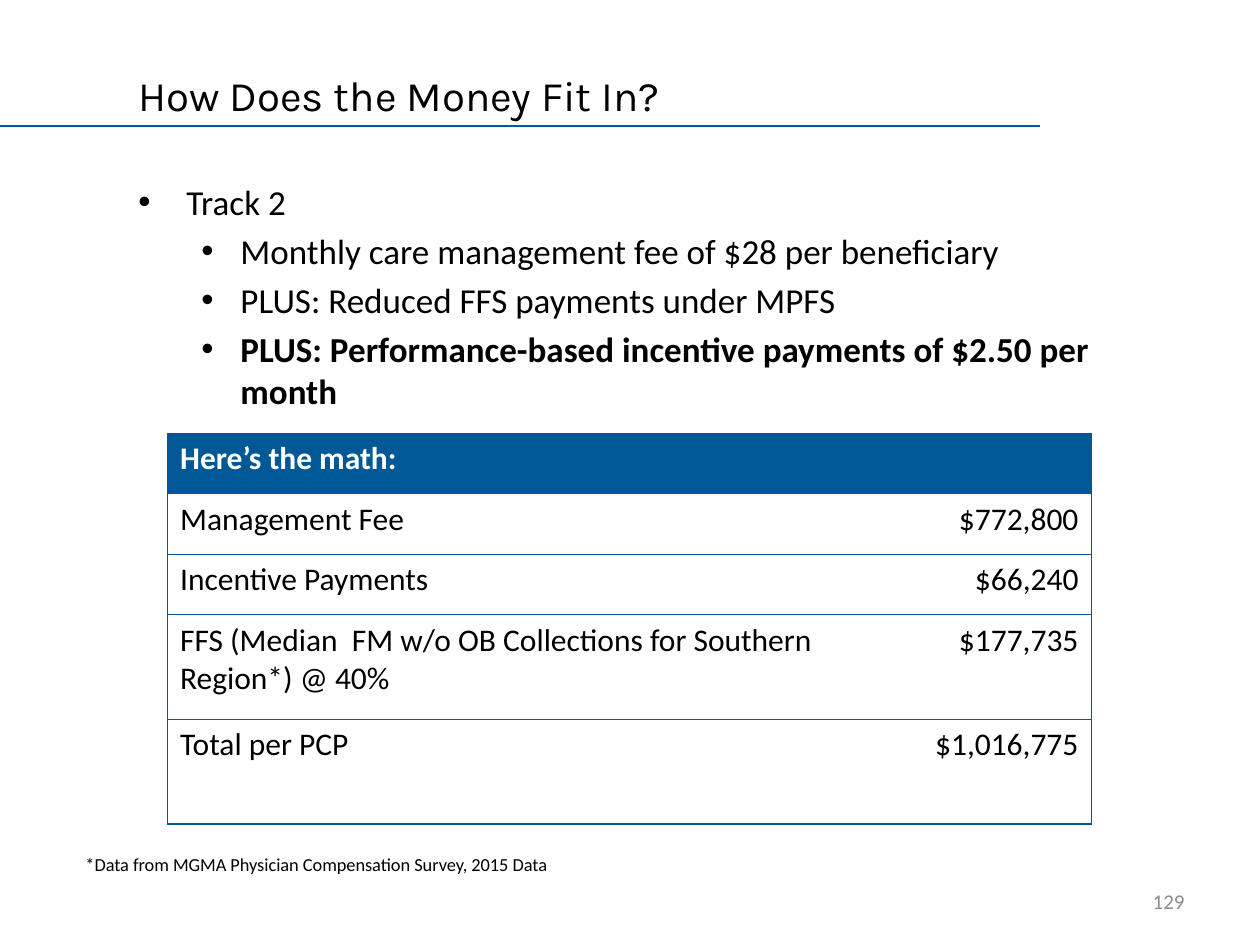
from dataclasses import dataclass

from lxml.etree import SubElement
from pptx import Presentation
from pptx.dml.color import RGBColor
from pptx.enum.shapes import MSO_CONNECTOR
from pptx.enum.text import MSO_ANCHOR, PP_ALIGN
from pptx.oxml.ns import qn
from pptx.util import Inches, Pt


@dataclass(frozen=True)
class Theme:
    rule: str = "005B99"
    table: str = "005996"
    text: str = "000000"
    header_text: str = "FFFFFF"
    page_number: str = "8C8C8C"
    title_font: str = "Karla"
    body_font: str = "Calibri"
    title_size: float = 24
    body_size: float = 20
    table_size: float = 18
    footnote_size: float = 10.5
    page_number_size: float = 12
    line_width: float = 0.75


theme = Theme()


def format_runs(paragraph, size, color=theme.text, font=theme.body_font, bold=False):
    for run in paragraph.runs:
        run.font.size = Pt(size)
        run.font.name = font
        run.font.bold = bold
        run.font.color.rgb = RGBColor.from_string(color)


def add_text_box(left, top, width, height, anchor=MSO_ANCHOR.TOP):
    box = slide.shapes.add_textbox(Inches(left), Inches(top), Inches(width), Inches(height))
    box.text_frame.word_wrap = True
    box.text_frame.vertical_anchor = anchor
    return box.text_frame


presentation = Presentation()
presentation.slide_width = Inches(10)
presentation.slide_height = Inches(7.5)
slide = presentation.slides.add_slide(presentation.slide_layouts[6])

# Title and its rule
title_rule = slide.shapes.add_connector(
    MSO_CONNECTOR.STRAIGHT, Inches(0), Inches(1), Inches(8.25), Inches(1))
title_rule.line.color.rgb = RGBColor.from_string(theme.rule)
title_rule.line.width = Pt(theme.line_width)
SubElement(title_rule._element.spPr, qn("a:effectLst"))

title = add_text_box(1, 0.5, 7, 0.5, MSO_ANCHOR.MIDDLE)
title.text = "How Does the Money Fit In?"
format_runs(title.paragraphs[0], theme.title_size, font=theme.title_font)

# Bullets: text, level, bold
bullets = [
    ("Track 2", 0, False),
    ("Monthly care management fee of $28 per beneficiary", 1, False),
    ("PLUS: Reduced FFS payments under MPFS", 1, False),
    ("PLUS: Performance-based incentive payments of $2.50 per month", 1, True),
]
level_indents = [(0.38, -0.38), (0.81, -0.31)]
body = add_text_box(1, 1.38, 7.98, 4.95)
body.text = "\n".join(text for text, level, bold in bullets)
for index, (paragraph, (text, level, bold)) in enumerate(zip(body.paragraphs, bullets)):
    margin, indent = level_indents[level]
    paragraph.level = level
    properties = paragraph._p.get_or_add_pPr()
    properties.set("marL", str(Inches(margin)))
    properties.set("indent", str(Inches(indent)))
    SubElement(properties, qn("a:buFont"), typeface="Arial")
    SubElement(properties, qn("a:buChar"), char="•")
    if index > 0:
        paragraph.space_before = Pt(0.2 * theme.body_size)
    format_runs(paragraph, theme.body_size, bold=bold)

# Payment table
rows = [
    ("Here’s the math:", ""),
    ("Management Fee", "$772,800"),
    ("Incentive Payments", "$66,240"),
    ("FFS (Median  FM w/o OB Collections for Southern Region*) @ 40%", "$177,735"),
    ("Total per PCP", "$1,016,775"),
]
column_widths = [5.58, 1.75]
row_heights = [0.48, 0.48, 0.48, 0.83, 0.83]
table_shape = slide.shapes.add_table(
    len(rows), len(column_widths), Inches(1.33), Inches(3.44),
    Inches(sum(column_widths)), Inches(sum(row_heights)))
table = table_shape.table
table.first_row = False
table.horz_banding = False
for column, width in zip(table.columns, column_widths):
    column.width = Inches(width)
for row, height in zip(table.rows, row_heights):
    row.height = Inches(height)

for row_index, row in enumerate(rows):
    is_header = row_index == 0
    for column_index, text in enumerate(row):
        cell = table.cell(row_index, column_index)
        cell.text_frame.text = text
        paragraph = cell.text_frame.paragraphs[0]
        paragraph.alignment = PP_ALIGN.RIGHT if column_index else PP_ALIGN.LEFT
        format_runs(paragraph, theme.table_size,
                    theme.header_text if is_header else theme.text, bold=is_header)

        # Borders come before the fill in the cell properties
        cell_properties = cell._tc.get_or_add_tcPr()
        drawn_sides = {"lnR" if column_index else "lnL", "lnT", "lnB"}
        for side in ("lnL", "lnR", "lnT", "lnB"):
            border = SubElement(cell_properties, qn(f"a:{side}"), w=str(Pt(theme.line_width)))
            if side in drawn_sides:
                border_fill = SubElement(border, qn("a:solidFill"))
                SubElement(border_fill, qn("a:srgbClr"), val=theme.table)
            else:
                SubElement(border, qn("a:noFill"))
        if is_header:
            cell.fill.solid()
            cell.fill.fore_color.rgb = RGBColor.from_string(theme.table)
        else:
            cell.fill.background()

# Footnote and page number
footnote = add_text_box(0.58, 6.72, 4.42, 0.28)
footnote.text = "*Data from MGMA Physician Compensation Survey, 2015 Data"
format_runs(footnote.paragraphs[0], theme.footnote_size)

page_number = add_text_box(7.17, 6.95, 2.33, 0.4, MSO_ANCHOR.MIDDLE)
page_number.text = "129"
page_number.paragraphs[0].alignment = PP_ALIGN.RIGHT
format_runs(page_number.paragraphs[0], theme.page_number_size, theme.page_number)

presentation.save("out.pptx")
